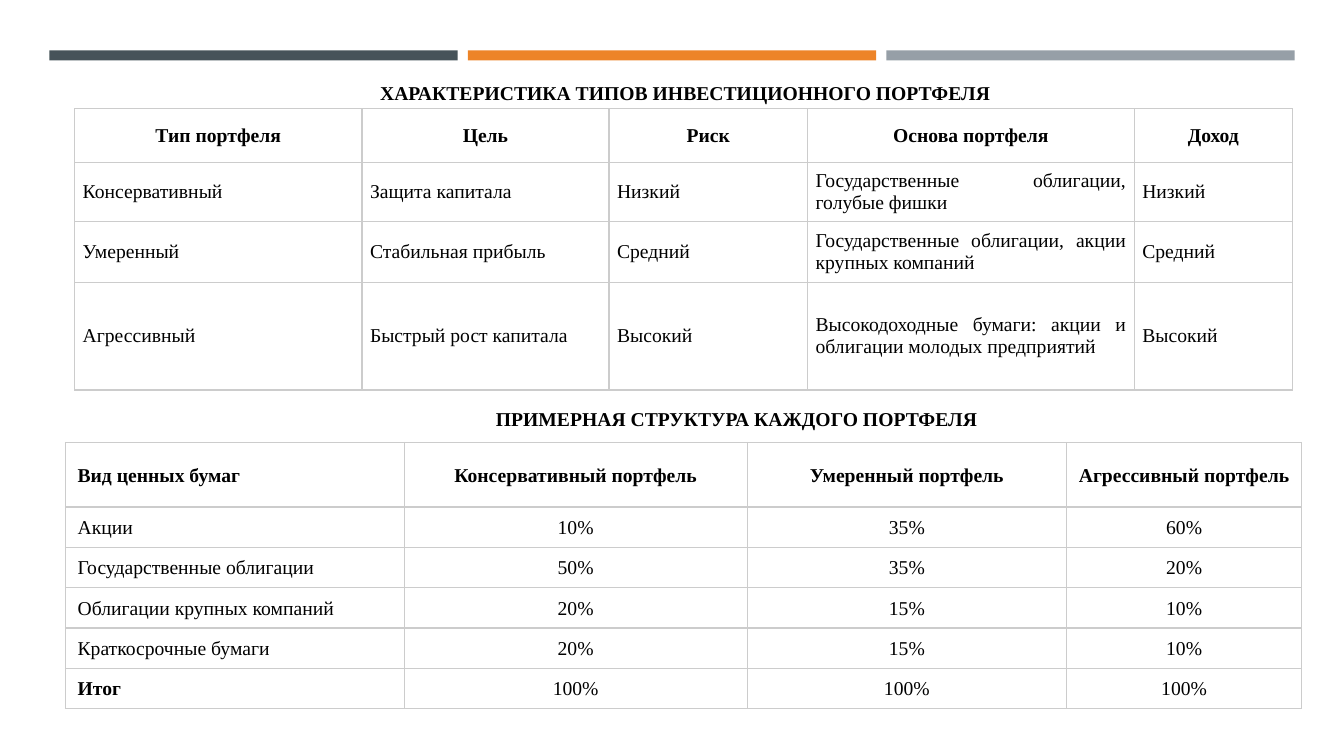
from lxml import etree
from pptx import Presentation
from pptx.dml.color import RGBColor
from pptx.enum import shapes, text
from pptx.oxml import ns
from pptx.util import Inches, Pt

BLACK = RGBColor(0, 0, 0)
WHITE = RGBColor(255, 255, 255)
SLATE = RGBColor(0x46, 0x53, 0x59)
ORANGE = RGBColor(0xED, 0x84, 0x28)
GREY = RGBColor(0x96, 0x9F, 0xA7)
RULE = RGBColor(0xCC, 0xCC, 0xCC)
MID = text.PP_ALIGN.CENTER
JUST = text.PP_ALIGN.JUSTIFY
FONT = {"name": "Times New Roman", "size": Pt(14)}

BARS = [SLATE, ORANGE, GREY]
HEADS = [
    ("ХАРАКТЕРИСТИКА ТИПОВ ИНВЕСТИЦИОННОГО ПОРТФЕЛЯ", (2.68, 0.64, 7.3, 0.42)),
    ("ПРИМЕРНАЯ СТРУКТУРА КАЖДОГО ПОРТФЕЛЯ", (3.83, 3.87, 6.06, 0.42)),
]
TYPES = {
    "at": (0.74, 1.08),
    "cols": [2.85, 2.45, 1.97, 3.24, 1.57],
    "rows": [0.53, 0.59, 0.6, 1.07],
    "pad": (0.08, 0.05),
    "gap": 1.0,
    "mid": lambda row, col: row == 0,
    "bold": lambda row, col: row == 0,
    "data": [
        ("Тип портфеля", "Цель", "Риск", "Основа портфеля", "Доход"),
        ("Консервативный", "Защита капитала", "Низкий",
         "Государственные облигации, голубые фишки", "Низкий"),
        ("Умеренный", "Стабильная прибыль", "Средний",
         "Государственные облигации, акции крупных компаний", "Средний"),
        ("Агрессивный", "Быстрый рост капитала", "Высокий",
         "Высокодоходные бумаги: акции и облигации молодых предприятий", "Высокий"),
    ],
}
SHARES = {
    "at": (0.65, 4.39),
    "cols": [3.36, 3.4, 3.17, 2.33],
    "rows": [0.64] + [0.4] * 5,
    "pad": (0.12, 0.07),
    "gap": 1.07,
    "mid": lambda row, col: col > 0,
    "bold": lambda row, col: row == 0 or (row == 5 and col == 0),
    "data": [
        ("Вид ценных бумаг", "Консервативный портфель", "Умеренный портфель",
         "Агрессивный портфель"),
        ("Акции", "10%", "35%", "60%"),
        ("Государственные облигации", "50%", "35%", "20%"),
        ("Облигации крупных компаний", "20%", "15%", "10%"),
        ("Краткосрочные бумаги", "20%", "15%", "10%"),
        ("Итог", "100%", "100%", "100%"),
    ],
}


def put(obj, vals):
    for key, val in vals.items():
        setattr(obj, key, val)


def style(para, bold, align, gap):
    put(para, {"alignment": align, "line_spacing": gap})
    put(para.font, {**FONT, "bold": bold})
    para.font.color.rgb = BLACK


def edge(cell):
    props = cell._tc.get_or_add_tcPr()
    for spot, side in enumerate(("lnL", "lnR", "lnT", "lnB")):
        line = etree.Element(ns.qn("a:" + side), w=str(Pt(1)))
        fill = etree.SubElement(line, ns.qn("a:solidFill"))
        etree.SubElement(fill, ns.qn("a:srgbClr"), val=str(RULE))
        props.insert(spot, line)


def grid(slide, plan):
    cols, rows, data = plan["cols"], plan["rows"], plan["data"]
    place = [Inches(v) for v in (*plan["at"], sum(cols), sum(rows))]
    table = slide.shapes.add_table(len(rows), len(cols), *place).table
    put(table, {"first_row": False, "horz_banding": False})
    for col, wide in zip(table.columns, cols):
        col.width = Inches(wide)
    for row, high in zip(table.rows, rows):
        row.height = Inches(high)
    side, top = (Inches(v) for v in plan["pad"])
    for r, line in enumerate(data):
        for c, words in enumerate(line):
            cell = table.cell(r, c)
            put(cell, {"text": words, "vertical_anchor": text.MSO_ANCHOR.MIDDLE,
                       "margin_left": side, "margin_right": side,
                       "margin_top": top, "margin_bottom": top})
            cell.fill.solid()
            cell.fill.fore_color.rgb = WHITE
            edge(cell)
            align = MID if plan["mid"](r, c) else JUST
            style(cell.text_frame.paragraphs[0], plan["bold"](r, c), align, plan["gap"])


def head(box, words, place):
    put(box, dict(zip(("left", "top", "width", "height"), map(Inches, place))))
    frame = box.text_frame
    put(frame, {"text": words, "word_wrap": True,
                "auto_size": text.MSO_AUTO_SIZE.NONE,
                "vertical_anchor": text.MSO_ANCHOR.TOP})
    para = frame.paragraphs[0]
    props = para._p.get_or_add_pPr()
    props.set("marL", str(Inches(0.5)))
    props.set("indent", str(Inches(0.49)))
    style(para, True, JUST, 1.5)


def main():
    deck = Presentation()
    put(deck, {"slide_width": Inches(13.33), "slide_height": Inches(7.5)})
    slide = deck.slides.add_slide(deck.slide_layouts[5])
    for i, color in enumerate(BARS):
        place = [Inches(v) for v in (0.49 + 4.15 * i, 0.5, 4.05, 0.1)]
        bar = slide.shapes.add_shape(shapes.MSO_SHAPE.RECTANGLE, *place)
        bar.shadow.inherit = False
        bar.fill.solid()
        bar.fill.fore_color.rgb = color
        bar.line.fill.background()
    grid(slide, TYPES)
    note = slide.shapes.add_textbox(0, 0, 0, 0)
    for box, (words, place) in zip((slide.shapes.title, note), HEADS):
        head(box, words, place)
    grid(slide, SHARES)
    deck.save("out.pptx")


if __name__ == "__main__":
    main()
